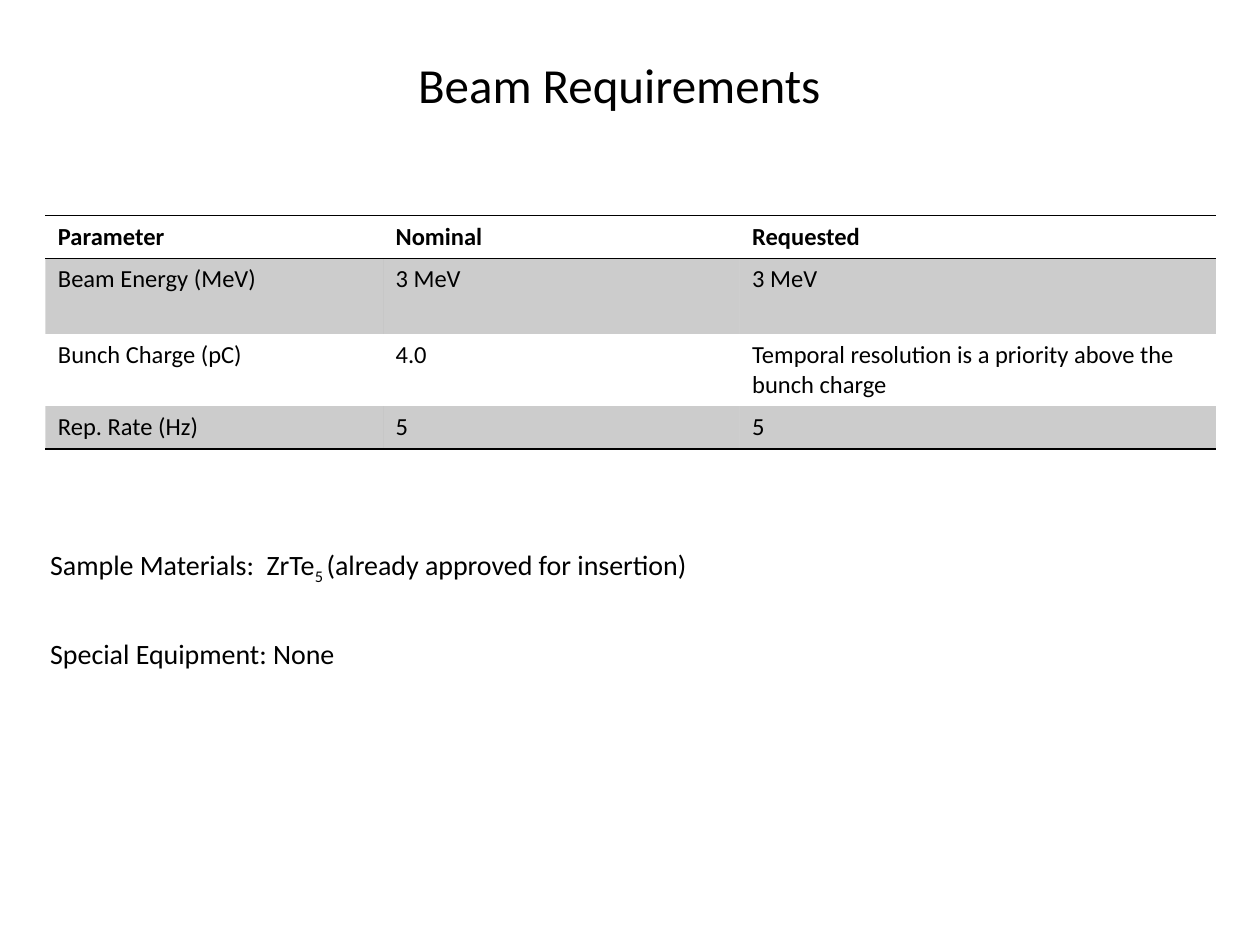
from lxml.etree import SubElement
from pptx import Presentation
from pptx.dml.color import RGBColor
from pptx.enum.text import MSO_AUTO_SIZE as AutoSize, PP_ALIGN as Align
from pptx.oxml import parse_xml
from pptx.oxml.ns import nsdecls, qn
from pptx.util import Inches, Pt

COLORS = {"ink": "000000"}
FONT = "Calibri"
BAND_OPACITY = 20
SUBSCRIPT = -25
NO_STYLE = "{2D5ABB26-0587-4C30-8999-92F81FD0307C}"

WIDTH, HEIGHT = 10, 7.5
LEFT, CONTENT_WIDTH = 0.3, 9.28
COLUMNS = [2.68, 2.83, 3.78]
ROWS = [0.34, 0.6, 0.57, 0.34]
REQUIREMENTS = [
    ["Parameter", "Nominal", "Requested"],
    ["Beam Energy (MeV)", "3 MeV", "3 MeV"],
    ["Bunch Charge (pC)", "4.0",
     "Temporal resolution is a priority above the bunch charge"],
    ["Rep. Rate (Hz)", "5", "5"],
]
NOTES = [
    [("Sample Materials:  ZrTe", 0), ("5 ", SUBSCRIPT),
     ("(already approved for insertion)", 0)],
    [("Special Equipment: None", 0)],
]


def style_paragraph(paragraph, size, bold=False):
    font = paragraph.font
    font.name, font.size, font.bold = FONT, Pt(size), bold
    font.color.rgb = RGBColor.from_string(COLORS["ink"])


def add_text(slide, box, runs, size, wrap=True, align=Align.LEFT):
    """Place one line of (text, baseline percent) runs in the box."""
    shape = slide.shapes.add_textbox(*map(Inches, box))
    frame = shape.text_frame
    frame.word_wrap = wrap
    frame.auto_size = AutoSize.SHAPE_TO_FIT_TEXT
    paragraph = frame.paragraphs[0]
    paragraph.alignment = align
    style_paragraph(paragraph, size)
    for text, baseline in runs:
        run = paragraph.add_run()
        run.text = text
        if baseline:
            run._r.get_or_add_rPr().set("baseline", str(baseline * 1000))


def add_title(slide, box):
    add_text(slide, box, [("Beam Requirements", 0)], 28, False, Align.CENTER)


def set_band(cell, banded):
    if not banded:
        cell.fill.background()
        return
    cell.fill.solid()
    cell.fill.fore_color.rgb = RGBColor.from_string(COLORS["ink"])
    color = cell._tc.tcPr.find(qn("a:solidFill"))[0]
    SubElement(color, qn("a:alpha"), val=str(BAND_OPACITY * 1000))


def set_borders(cell, sides):
    """Rule the given sides, which come in schema order before the fill."""
    for index, side in enumerate(sides):
        cell._tc.get_or_add_tcPr().insert(index, parse_xml(
            f'<a:ln{side} {nsdecls("a")} w="{Pt(1)}"><a:solidFill>'
            f'<a:srgbClr val="{COLORS["ink"]}"/></a:solidFill></a:ln{side}>'))


def add_requirements(slide, left, top):
    frame = slide.shapes.add_table(
        len(ROWS), len(COLUMNS), Inches(left), Inches(top),
        Inches(sum(COLUMNS)), Inches(sum(ROWS)))
    table = frame.table
    table._tbl.tblPr.find(qn("a:tableStyleId")).text = NO_STYLE
    for column, width in zip(table.columns, COLUMNS):
        column.width = Inches(width)
    for row, height in zip(table.rows, ROWS):
        row.height = Inches(height)
    borders = {0: "TB", len(ROWS) - 1: "B"}
    for row_index, values in enumerate(REQUIREMENTS):
        for cell, value in zip(table.rows[row_index].cells, values):
            cell.text = value
            style_paragraph(cell.text_frame.paragraphs[0], 14, row_index == 0)
            set_band(cell, row_index % 2 == 1)
            set_borders(cell, borders.get(row_index, ""))


def add_notes(slide, left, top, width, pitch):
    for index, runs in enumerate(NOTES):
        add_text(slide, (left, top + index * pitch, width, 0.37), runs, 16)


def main():
    presentation = Presentation()
    presentation.slide_width = Inches(WIDTH)
    presentation.slide_height = Inches(HEIGHT)
    slide = presentation.slides.add_slide(presentation.slide_layouts[6])
    add_requirements(slide, 0.36, 1.71)
    add_title(slide, (3.2, 0.38, 3.43, 0.57))
    add_notes(slide, LEFT, 4.3, CONTENT_WIDTH, 0.7)
    presentation.save("out.pptx")


if __name__ == "__main__":
    main()
